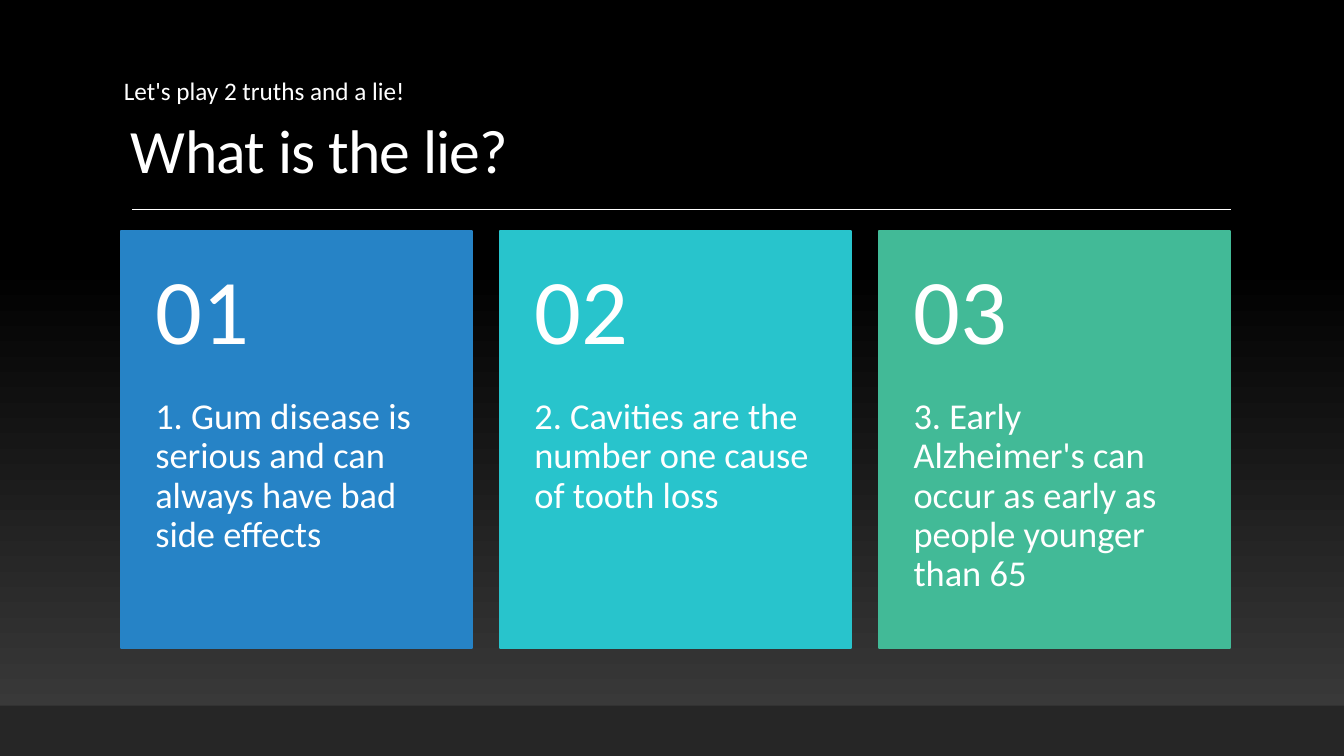
from lxml import etree
from pptx import Presentation
from pptx.dml.color import RGBColor
from pptx.enum.shapes import MSO_CONNECTOR, MSO_SHAPE
from pptx.enum.text import MSO_ANCHOR, MSO_AUTO_SIZE
from pptx.oxml.ns import qn
from pptx.util import Emu, Pt

RECT = MSO_SHAPE.RECTANGLE
STRAIGHT = MSO_CONNECTOR.STRAIGHT
TOP, MIDDLE, BOTTOM = MSO_ANCHOR.TOP, MSO_ANCHOR.MIDDLE, MSO_ANCHOR.BOTTOM
NO_FIT, GROW = MSO_AUTO_SIZE.NONE, MSO_AUTO_SIZE.SHAPE_TO_FIT_TEXT

WHITE = RGBColor(0xFF, 0xFF, 0xFF)
BLACK = RGBColor(0x00, 0x00, 0x00)
GREY = RGBColor(0x3F, 0x3F, 0x3F)
FOOTER = RGBColor(0x26, 0x26, 0x26)
BLUE = RGBColor(0x26, 0x83, 0xC6)
CYAN = RGBColor(0x28, 0xC4, 0xCC)
GREEN = RGBColor(0x42, 0xBA, 0x97)

WIDTH, HEIGHT = 1333, 750
CARD_LEFT, CARD_TOP, CARD_WIDTH, CARD_STEP = 120, 229, 348, 376
NUMBER_HEIGHT, BODY_HEIGHT = 166, 248
CARDS = [
    (BLUE, "Gum disease is serious and can always have bad side effects"),
    (CYAN, "Cavities are the number one cause of tooth loss"),
    (GREEN, "Early Alzheimer's can occur as early as people younger than 65"),
]


def px(n):
    return Emu(n * 9144)


class Deck:
    font = {"name": "Calibri"}

    def __init__(self):
        self.prs = Presentation()
        self.prs.slide_width, self.prs.slide_height = px(WIDTH), px(HEIGHT)
        self.s = self.prs.slides.add_slide(self.prs.slide_layouts[6])

    def gradient(self, fill):
        fill.gradient()
        fill.gradient_angle = 90
        for stop, color, position in zip(fill.gradient_stops, (GREY, BLACK), (0, 0.65)):
            stop.color.rgb = color
            stop.position = position

    def rect(self, x, y, w, h, color=None, outlined=False):
        sp = self.s.shapes.add_shape(RECT, px(x), px(y), px(w), px(h))
        sp.shadow.inherit = False
        if color is None:
            self.gradient(sp.fill)
        else:
            sp.fill.solid()
            sp.fill.fore_color.rgb = color
        if outlined:
            sp.line.color.rgb = color
            sp.line.width = Pt(1.25)
        else:
            sp.line.fill.background()

    def line(self, x1, y1, x2, y2):
        sp = self.s.shapes.add_connector(STRAIGHT, px(x1), px(y1), px(x2), px(y2))
        sp.line.color.rgb = WHITE
        sp.line.width = Pt(1)
        etree.SubElement(sp._element.spPr, qn("a:effectLst"))

    def text(self, x, y, w, h, text, size, insets=(10, 5, 10, 5),
             anchor=TOP, spacing=0.9, fit=NO_FIT, tracking=None):
        sp = self.s.shapes.add_textbox(px(x), px(y), px(w), px(h))
        tf = sp.text_frame
        left, top, right, bottom = map(px, insets)
        frame = {"word_wrap": True, "auto_size": fit, "vertical_anchor": anchor,
                 "margin_left": left, "margin_top": top,
                 "margin_right": right, "margin_bottom": bottom}
        for name, value in frame.items():
            setattr(tf, name, value)
        p = tf.paragraphs[0]
        p.line_spacing = spacing
        r = p.add_run()
        r.text = text
        for name, value in {**self.font, "size": Pt(size)}.items():
            setattr(r.font, name, value)
        r.font.color.rgb = WHITE
        if tracking is not None:
            r._r.get_or_add_rPr().set("spc", str(tracking))

    def card(self, index, color, statement):
        x = CARD_LEFT + index * CARD_STEP
        number = index + 1
        body_top = CARD_TOP + NUMBER_HEIGHT
        self.rect(x, CARD_TOP, CARD_WIDTH, NUMBER_HEIGHT + BODY_HEIGHT, color, True)
        self.text(x, body_top, CARD_WIDTH, BODY_HEIGHT,
                  f"{number}. {statement}", 26, (34, 0, 34, 36))
        self.text(x, CARD_TOP, CARD_WIDTH, NUMBER_HEIGHT,
                  f"{number:02}", 66, (34, 18, 34, 18), MIDDLE)


def main():
    deck = Deck()
    deck.gradient(deck.s.background.fill)
    deck.rect(0, 0, WIDTH, HEIGHT)
    deck.text(120, 31, 1100, 159, "What is the lie?", 44, anchor=BOTTOM, tracking=-50)
    deck.line(131, 208, 1221, 208)
    deck.rect(0, 700, WIDTH, 50, FOOTER)
    for index, (color, statement) in enumerate(CARDS):
        deck.card(index, color, statement)
    deck.text(113, 70, 475, 40, "Let's play 2 truths and a lie!", 18, spacing=1.0, fit=GROW)
    deck.prs.save("out.pptx")


if __name__ == "__main__":
    main()
